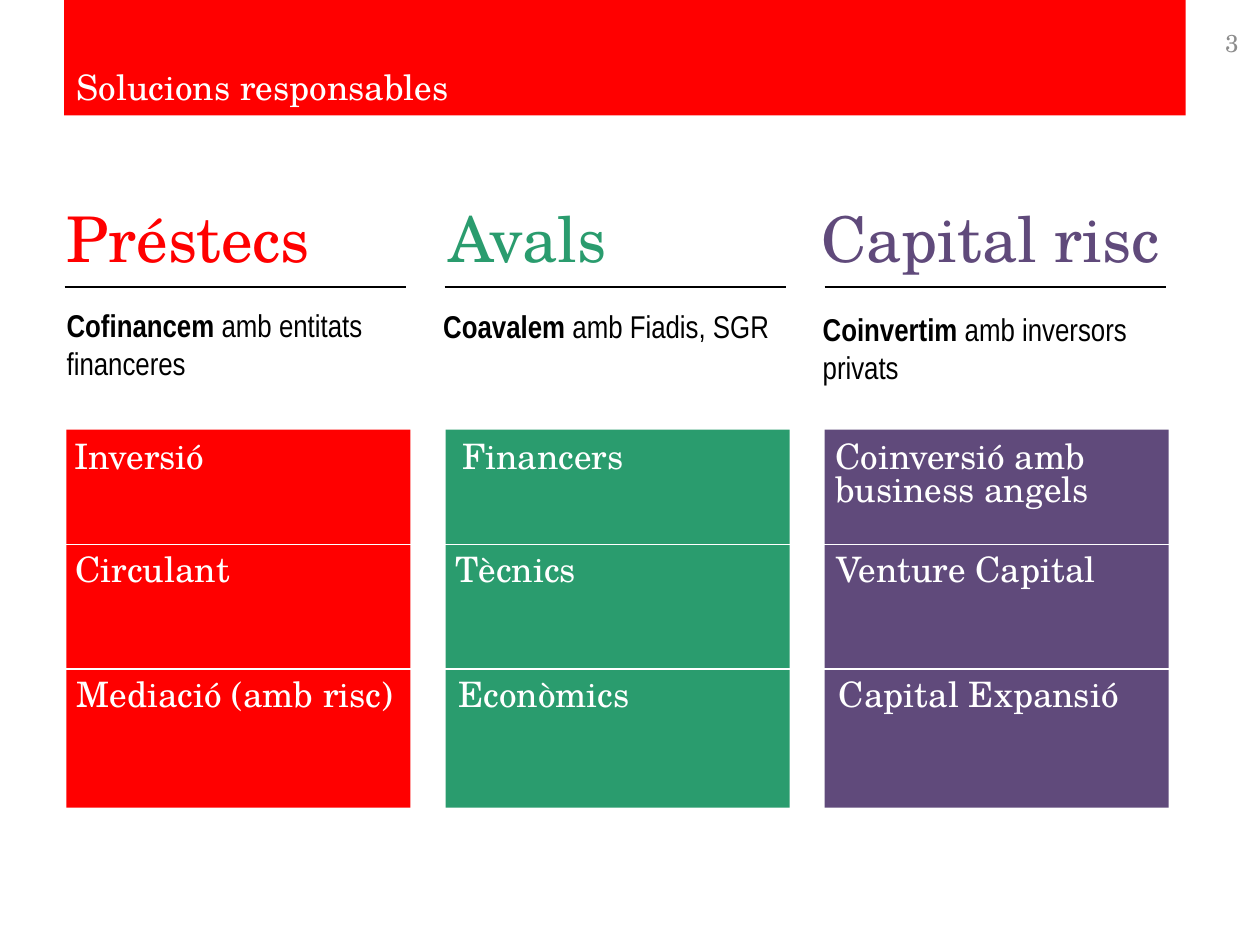
from lxml import etree
from pptx import Presentation
from pptx.dml.color import RGBColor
from pptx.enum.shapes import MSO_CONNECTOR, MSO_SHAPE
from pptx.enum.text import MSO_ANCHOR, PP_ALIGN
from pptx.oxml.ns import qn
from pptx.util import Pt

RECTANGLE, STRAIGHT = MSO_SHAPE.RECTANGLE, MSO_CONNECTOR.STRAIGHT
TOP, MIDDLE, BOTTOM = MSO_ANCHOR.TOP, MSO_ANCHOR.MIDDLE, MSO_ANCHOR.BOTTOM
LEFT, RIGHT = PP_ALIGN.LEFT, PP_ALIGN.RIGHT

SERIF, NARROW = "TeX Gyre Schola", "Arial Narrow"
RED, GREEN, PURPLE = "FF0000", "2A9C6E", "604A7B"
WHITE, BLACK, GREY = "FFFFFF", "000000", "8C8C8C"

# Content; each "box" is left, top, width, and items are (text, left)
TITLE = "Solucions responsables"
PAGE_NUMBER = "3"
COLUMNS = [
    {"color": RED, "heading": "Préstecs", "heading_box": (31, 118.8, 278),
     "partner": ("Cofinancem ", "amb entitats financeres"),
     "partner_box": (31, 171.4, 198.7),
     "items": [("Inversió", 35.3), ("Circulant", 36), ("Mediació (amb risc)", 36.7)]},
    {"color": GREEN, "heading": "Avals", "heading_box": (249.1, 118.8, 141.8),
     "partner": ("Coavalem ", "amb Fiadis, SGR"),
     "partner_box": (246.2, 172.1, 212.4),
     "items": [("Financers", 257), ("Tècnics", 253.4), ("Econòmics", 254.9)]},
    {"color": PURPLE, "heading": "Capital risc", "heading_box": (462.2, 118.8, 249.1),
     "partner": ("Coinvertim ", "amb inversors privats"),
     "partner_box": (463, 173.5, 209.5),
     "items": [("Coinversió amb business angels", 470.2), ("Venture Capital", 470.9),
               ("Capital Expansió", 472.3)]},
]

# Grid
FIRST_LEFT, PITCH = 38, 216.6
PANEL_TOP, PANEL_WIDTH, PANEL_HEIGHT = 245.5, 196.6, 216
RULE_TOP, RULE_WIDTH = 164.2, 195
DIVIDERS = [(-3, 311.2), (-5, 382.2)]  # offset from the panel, top
DIVIDER_WIDTH = 202
ITEM_TOPS, ITEM_WIDTH = (249.1, 314.2, 385.5), 198


def rgb(value):
    return RGBColor.from_string(value)


def add_panel(left, top, width, height, color):
    shape = slide.shapes.add_shape(RECTANGLE, Pt(left), Pt(top), Pt(width), Pt(height))
    shape.shadow.inherit = False
    shape.fill.solid()
    shape.fill.fore_color.rgb = rgb(color)
    shape.line.fill.background()


def add_line(left, top, width, color):
    line = slide.shapes.add_connector(STRAIGHT, Pt(left), Pt(top), Pt(left + width), Pt(top))
    line.line.color.rgb = rgb(color)
    line.line.width = Pt(1)
    etree.SubElement(line._element.spPr, qn("a:effectLst"))


def add_text(box, runs, size, color, name=SERIF, spacing=None, anchor=TOP, align=LEFT):
    """Write runs of (text, bold) in one paragraph."""
    shape = slide.shapes.add_textbox(*(Pt(value) for value in box))
    frame = shape.text_frame
    frame.word_wrap = True
    frame.vertical_anchor = anchor
    paragraph = frame.paragraphs[0]
    paragraph.alignment = align
    paragraph.line_spacing = spacing
    for text, bold in runs:
        run = paragraph.add_run()
        run.text = text
        run.font.color.rgb = rgb(color)
        for key, value in {"name": name, "size": Pt(size), "bold": bold}.items():
            setattr(run.font, key, value)


presentation = Presentation()
presentation.slide_width, presentation.slide_height = Pt(720), Pt(540)
slide = presentation.slides.add_slide(presentation.slide_layouts[6])

# Title band and page number
add_panel(36.7, 0, 640.8, 66, RED)
add_text((36.7, 0, 572.4, 64.8), [(TITLE, False)], 20, WHITE, anchor=BOTTOM)
add_text((547.2, 5.8, 167.8, 37.4), [(PAGE_NUMBER, False)], 14, GREY,
         anchor=MIDDLE, align=RIGHT)

for index, column in enumerate(COLUMNS):
    left = FIRST_LEFT + index * PITCH

    # Heading, rule and partner line
    add_text((*column["heading_box"], 44), [(column["heading"], False)], 36,
             column["color"], spacing=0.8)
    add_line(left - 1 + index * 0.5, RULE_TOP, RULE_WIDTH, BLACK)
    add_text((*column["partner_box"], 51), zip(column["partner"], (True, False)), 18,
             BLACK, name=NARROW)

    # Coloured panel split in three
    add_panel(left, PANEL_TOP, PANEL_WIDTH, PANEL_HEIGHT, column["color"])
    for (text, item_left), top in zip(column["items"], ITEM_TOPS):
        add_text((item_left, top, ITEM_WIDTH, 27), [(text, False)], 20, WHITE, spacing=0.8)
    for offset, top in DIVIDERS:
        add_line(left + offset, top, DIVIDER_WIDTH, WHITE)

presentation.save("out.pptx")
